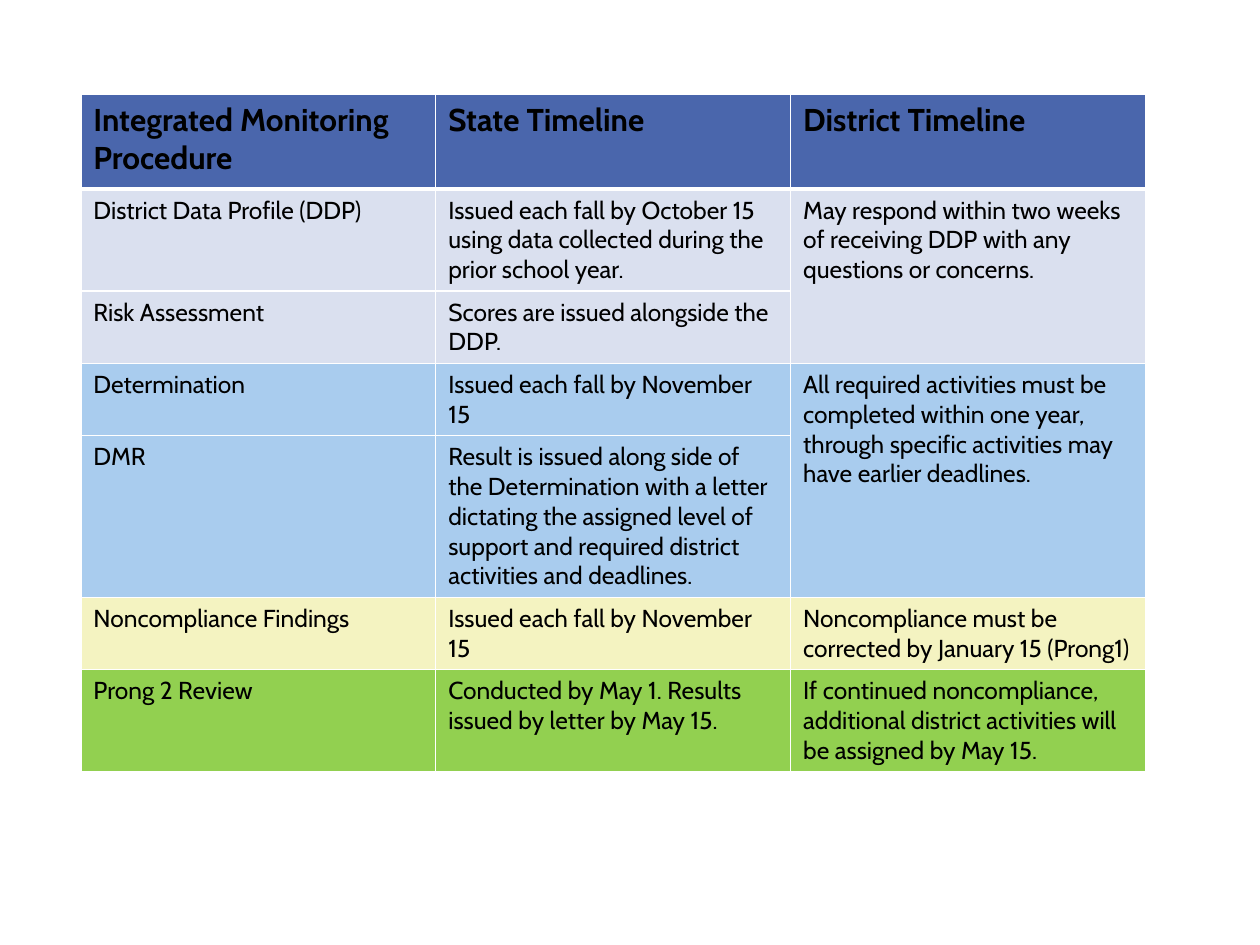
from lxml.etree import SubElement
from pptx import Presentation
from pptx.dml.color import RGBColor
from pptx.oxml.ns import qn
from pptx.util import Pt


def color(hex_value):
    return RGBColor.from_string(hex_value)


def add_borders(cell, widths):
    properties = cell._tc.get_or_add_tcPr()
    for side, width in widths.items():
        line = SubElement(properties, qn(f"a:{side}"), w=str(Pt(width)))
        fill = SubElement(line, qn("a:solidFill"))
        SubElement(fill, qn("a:srgbClr"), val="FFFFFF")


presentation = Presentation()
presentation.slide_width = Pt(720)
presentation.slide_height = Pt(540)
slide = presentation.slides.add_slide(presentation.slide_layouts[6])

# Each row: height, fill, texts (None continues the cell above)
schedule = [
    (54, "4A66AC", ["Integrated Monitoring Procedure", "State Timeline", "District Timeline"]),
    (50.4, "DAE0EF", [
        "District Data Profile (DDP)",
        "Issued each fall by October 15 using data collected during the prior school year.",
        "May respond within two weeks of receiving DDP with any questions or concerns."]),
    (34.56, "DAE0EF", ["Risk Assessment", "Scores are issued alongside the DDP.", None]),
    (29.52, "A9CCEE", [
        "Determination",
        "Issued each fall by November 15",
        "All required activities must be completed within one year, "
        "through specific activities may have earlier deadlines."]),
    (92.16, "A9CCEE", [
        "DMR",
        "Result is issued along side of the Determination with a letter dictating "
        "the assigned level of support and required district activities and deadlines.",
        None]),
    (29.52, "F4F3C1", [
        "Noncompliance Findings",
        "Issued each fall by November 15",
        "Noncompliance must be corrected by January 15 (Prong1)"]),
    (29.52, "92D050", [
        "Prong 2 Review",
        "Conducted by May 1. Results issued by letter by May 15.",
        "If continued noncompliance, additional district activities will be assigned by May 15."]),
]

# Timeline table
timeline_frame = slide.shapes.add_table(len(schedule), 3, Pt(46.2), Pt(54), Pt(608.4), Pt(372.24))
timeline = timeline_frame.table
for column in timeline.columns:
    column.width = Pt(202.8)

for row, (height, fill, texts) in enumerate(schedule):
    timeline.rows[row].height = Pt(height)
    for column, text in enumerate(texts):
        cell = timeline.cell(row, column)
        add_borders(cell, {"lnL": 1, "lnR": 1,
                           "lnT": 3 if row == 1 else 1,
                           "lnB": 3 if row == 0 else 1})
        cell.fill.solid()
        cell.fill.fore_color.rgb = color(fill)
        if text is None:
            timeline.cell(row - 1, column).merge(cell)
            continue
        run = cell.text_frame.paragraphs[0].add_run()
        run.text = text
        run.font.name = "Cabin"
        run.font.size = Pt(18 if row == 0 else 14)
        run.font.bold = row == 0
        run.font.color.rgb = color("000000")

# Row heights reset the frame, so its height is set last
timeline_frame.height = Pt(372.24)

presentation.save("out.pptx")
